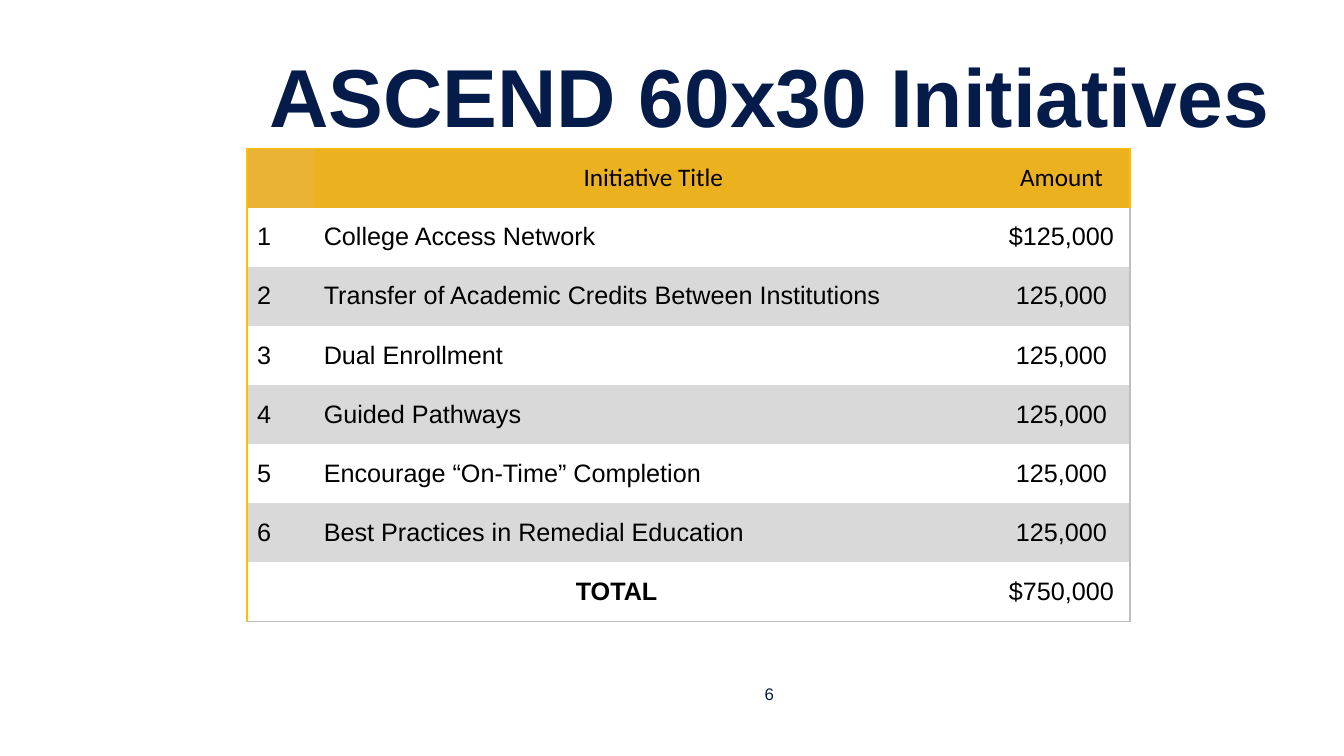
import pptx
import pptx.dml.color
import pptx.enum.text
import pptx.oxml
import pptx.oxml.ns
import pptx.util
from lxml import etree

Pt = pptx.util.Pt
ALIGN = pptx.enum.text.PP_ALIGN
COLORS = {
    "navy": "051C4B",
    "black": "000000",
    "white": "FFFFFF",
    "band": "D9D9D9",
    "header": "EBB11E",
    "header_corner": "EBB335",
    "gold_line": "FFC000",
    "gray_line": "BFBFBF",
}


def write_text(text_frame, text, size=18, font="Arial", color="black", bold=False, align=ALIGN.CENTER):
    text_frame.word_wrap = True
    text_frame.vertical_anchor = pptx.enum.text.MSO_ANCHOR.MIDDLE
    paragraph = text_frame.paragraphs[0]
    paragraph.alignment = align
    run = paragraph.add_run()
    run.text = text
    run.font.size = Pt(size)
    run.font.name = font
    run.font.bold = bold
    run.font.color.rgb = pptx.dml.color.RGBColor.from_string(COLORS[color])


def set_borders(cell, lines):
    properties = cell._tc.get_or_add_tcPr()
    for side in "LRTB":
        line = etree.SubElement(properties, pptx.oxml.ns.qn(f"a:ln{side}"), w=str(Pt(1)))
        if side in lines:
            fill = etree.SubElement(line, pptx.oxml.ns.qn("a:solidFill"))
            etree.SubElement(fill, pptx.oxml.ns.qn("a:srgbClr"), val=COLORS[lines[side]])
        else:
            etree.SubElement(line, pptx.oxml.ns.qn("a:noFill"))


presentation = pptx.Presentation()
presentation.slide_width = Pt(960)
presentation.slide_height = Pt(540)
slide = presentation.slides.add_slide(presentation.slide_layouts[5])

# Title
title = slide.shapes.title
title.left, title.top, title.width, title.height = Pt(150), Pt(22.3), Pt(799), Pt(90)
title.text_frame.auto_size = pptx.enum.text.MSO_AUTO_SIZE.NONE
write_text(title.text_frame, "ASCEND 60x30 Initiatives", size=58.7, color="navy", bold=True)

# Initiative table
initiatives = [
    "College Access Network",
    "Transfer of Academic Credits Between Institutions",
    "Dual Enrollment",
    "Guided Pathways",
    "Encourage “On-Time” Completion",
    "Best Practices in Remedial Education",
]
rows = [("", "Initiative Title", "Amount")]
for number, initiative in enumerate(initiatives, start=1):
    rows.append((str(number), initiative, "$125,000" if number == 1 else "125,000"))
rows.append(("TOTAL ", "", "$750,000"))

column_widths = [47.7, 485.1, 98]
row_height = 42.24
last_row = len(rows) - 1
last_column = len(column_widths) - 1
table = slide.shapes.add_table(
    len(rows), len(column_widths), Pt(176.4), Pt(106),
    Pt(sum(column_widths)), Pt(row_height * len(rows))).table
for column, width in zip(table.columns, column_widths):
    column.width = Pt(width)
for row in table.rows:
    row.height = Pt(row_height)
table.cell(last_row, 0).merge(table.cell(last_row, 1))

for row_index, row_texts in enumerate(rows):
    is_header = row_index == 0
    is_total = row_index == last_row
    for column_index, text in enumerate(row_texts):
        cell = table.cell(row_index, column_index)

        # Outer border only
        lines = {}
        if column_index == 0:
            lines["L"] = "gold_line"
        if column_index == last_column:
            lines["R"] = "gold_line" if is_header else "gray_line"
        if is_header:
            lines["T"] = "gold_line"
        if is_total:
            lines["B"] = "gray_line"
        set_borders(cell, lines)

        # Header and banded fills
        if is_header:
            fill = "header_corner" if column_index == 0 else "header"
        else:
            fill = "band" if row_index % 2 == 0 else "white"
        cell.fill.solid()
        cell.fill.fore_color.rgb = pptx.dml.color.RGBColor.from_string(COLORS[fill])

        # Cell text
        cell.vertical_anchor = pptx.enum.text.MSO_ANCHOR.MIDDLE
        if text:
            centered = is_header or is_total or column_index == last_column
            write_text(
                cell.text_frame, text,
                font="Calibri" if is_header else "Arial",
                bold=is_total and column_index == 0,
                align=ALIGN.CENTER if centered else ALIGN.LEFT)

# Page number
page_number = slide.shapes.add_textbox(Pt(525), Pt(481), Pt(49), Pt(29))
write_text(page_number.text_frame, "6", size=12, color="navy")

presentation.save("out.pptx")
